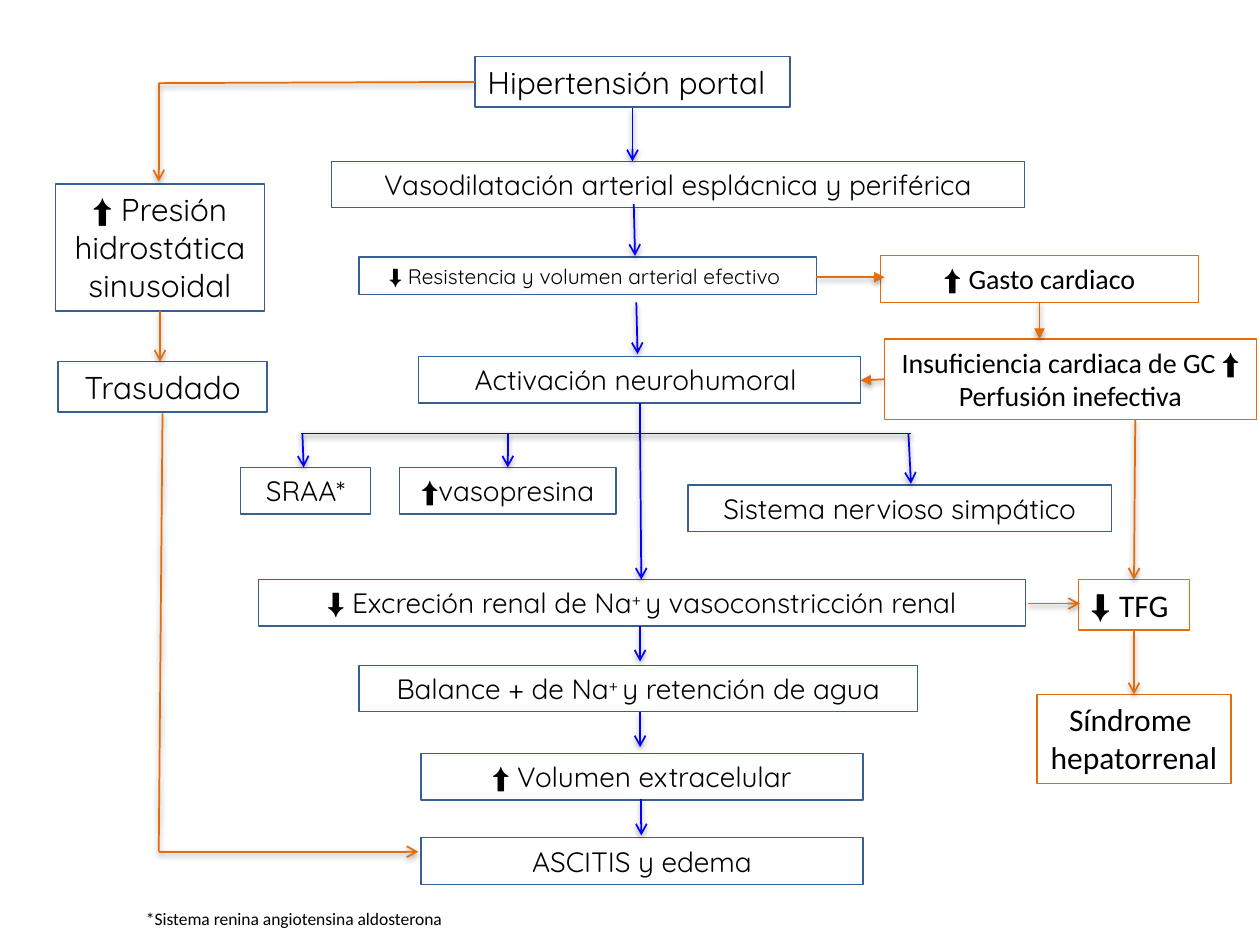
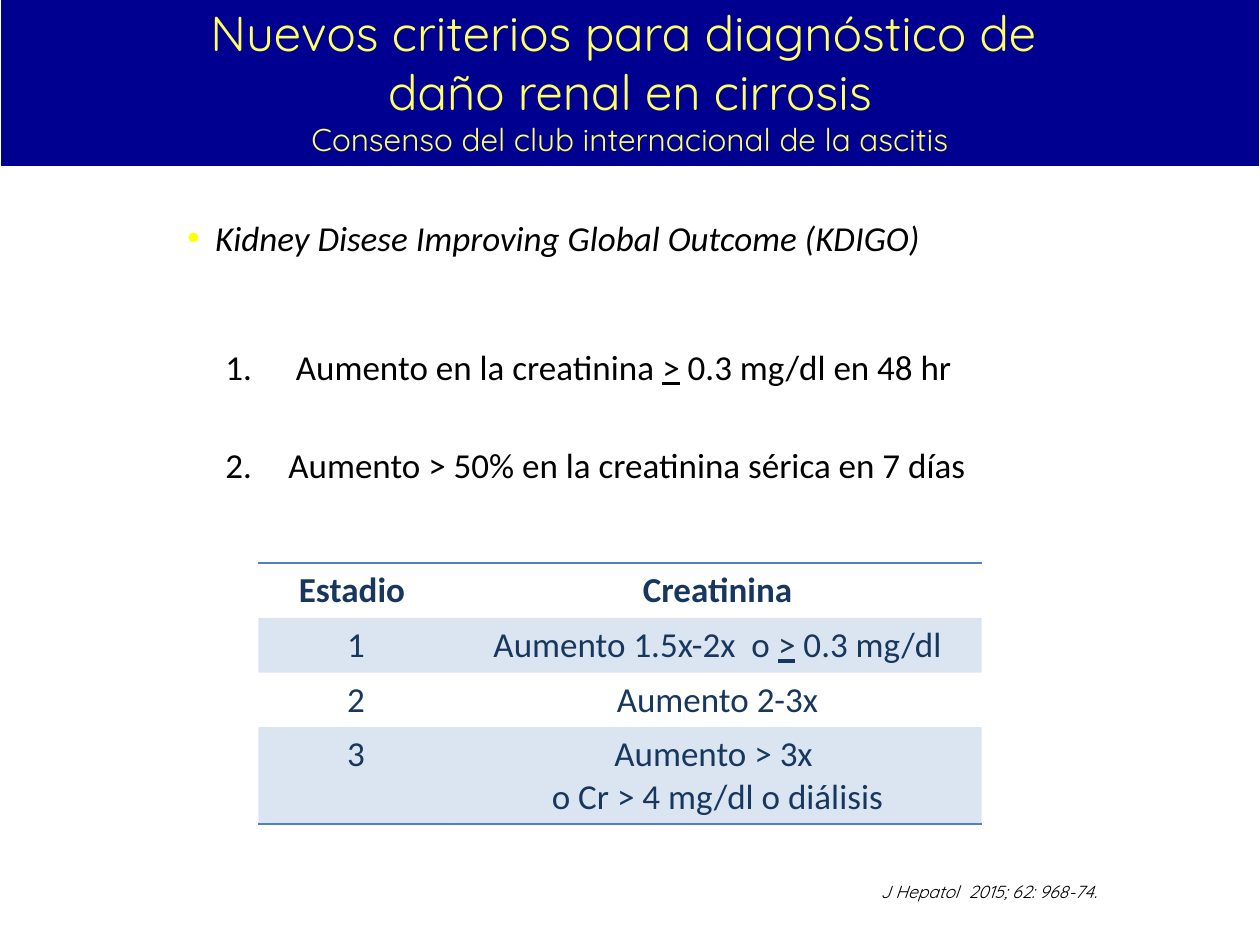
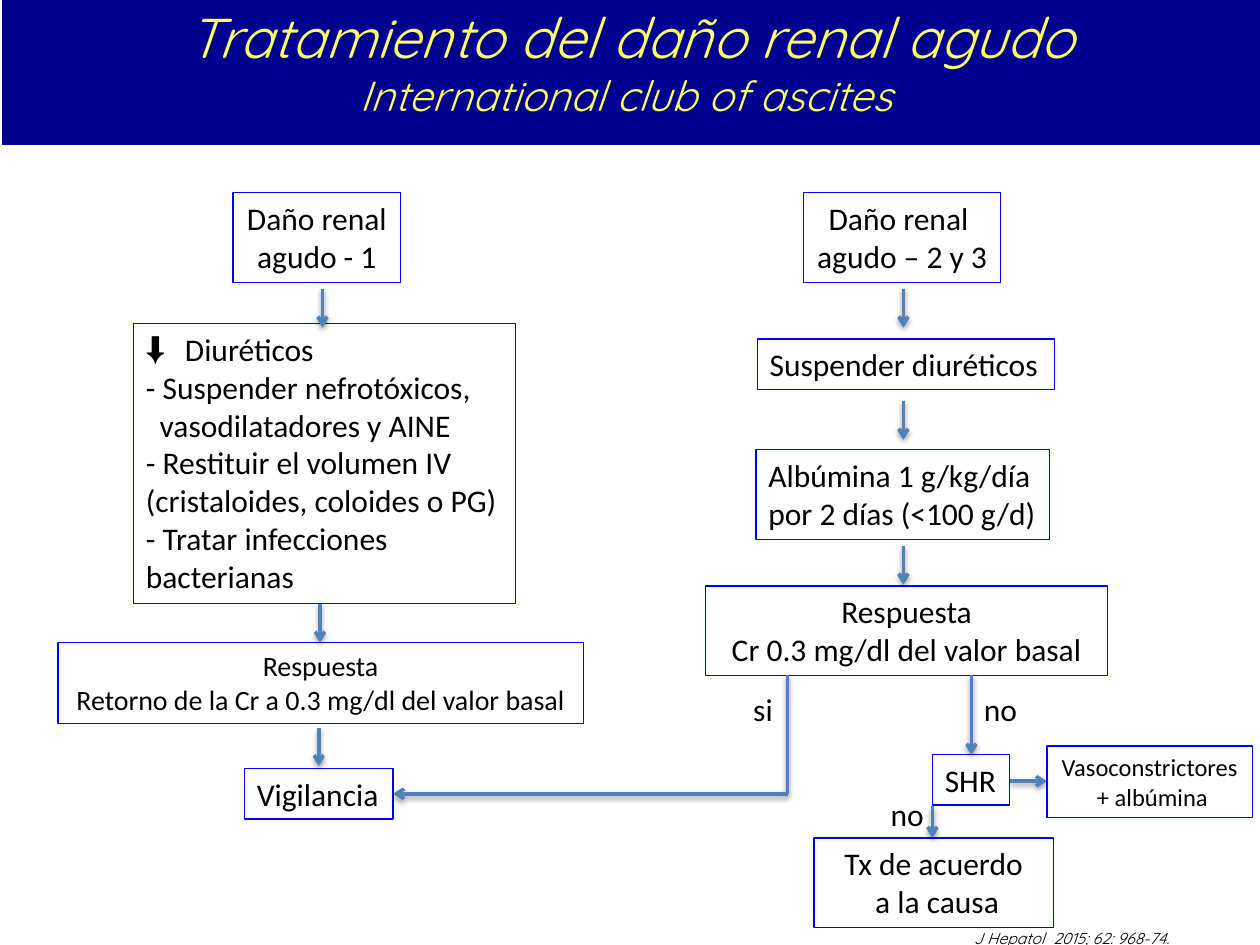
from dataclasses import dataclass
from lxml import etree
from pptx import Presentation, util as u
from pptx.dml.color import RGBColor
from pptx.enum import shapes, text
from pptx.oxml import ns


@dataclass(frozen=True)
class Theme:
    black: str = "000000"
    white: str = "FFFFFF"
    navy: str = "000090"
    pale: str = "FFFF66"
    yellow: str = "FFFF00"
    steel: str = "376092"
    blue: str = "0000FF"
    orange: str = "E46C0A"
    sky: str = "4F81BD"
    ink: str = "17375E"
    head: str = "Quicksand"
    body: str = "Calibri"
    sign: str = "Arial"
    huge: int = 32
    title: int = 28
    sub: int = 24
    large: int = 20
    base: int = 18
    mid: int = 16
    small: int = 14
    tiny: int = 12
    note: int = 10
    least: int = 9


T = Theme()
MID, LEFT = text.PP_ALIGN.CENTER, text.PP_ALIGN.LEFT
SIGN = {"name": T.sign}
UP, DOWN = ("⬆ ", SIGN), ("⬇ ", SIGN)
PLUS = ("+ ", {"base": 30000})
MIN = (">", {"underline": True})
CITE = "J Hepatol  2015; 62: 968-74."


def put(obj, **vals):
    for key, val in vals.items():
        setattr(obj, key, val)


def rgb(code):
    return RGBColor.from_string(code)


def node(top, tag, **vals):
    return etree.SubElement(top, ns.qn("a:" + tag), {k: str(v) for k, v in vals.items()})


class Deck:
    def __init__(self, theme):
        self.theme = theme
        self.prs = Presentation()
        put(self.prs, slide_width=u.Inches(10), slide_height=u.Inches(7.5))

    def new(self):
        self.slide = self.prs.slides.add_slide(self.prs.slide_layouts[6])

    def say(self, frame, paras, align=LEFT, color=None, **font):
        """Each paragraph is a string or a list of runs; a run may carry its own format."""
        for i, runs in enumerate(paras):
            par = frame.paragraphs[0] if i == 0 else frame.add_paragraph()
            par.alignment = align
            for item in [runs] if isinstance(runs, str) else runs:
                words, extra = (item, {}) if isinstance(item, str) else item
                look = {**font, **extra}
                base, size = look.pop("base", 0), look.pop("size")
                run = par.add_run()
                run.text = words
                put(run.font, size=u.Pt(size), **look)
                run.font.color.rgb = rgb(color or self.theme.black)
                if base:
                    run._r.get_or_add_rPr().set("baseline", str(base))

    def fit(self, shape, wrap):
        put(shape.text_frame, word_wrap=wrap, vertical_anchor=text.MSO_ANCHOR.TOP,
            auto_size=text.MSO_AUTO_SIZE.SHAPE_TO_FIT_TEXT)

    def box(self, at, paras, line, fill=None, wrap=True, **look):
        shape = self.slide.shapes.add_shape(
            shapes.MSO_SHAPE.RECTANGLE, *map(u.Inches, at))
        shape.shadow.inherit = False
        if fill:
            shape.fill.solid()
            shape.fill.fore_color.rgb = rgb(fill)
        else:
            shape.fill.background()
        shape.line.color.rgb = rgb(line)
        shape.line.width = u.Pt(0.75)
        self.fit(shape, wrap)
        self.say(shape.text_frame, paras, **look)
        return shape

    def label(self, at, paras, wrap=False, **look):
        shape = self.slide.shapes.add_textbox(*map(u.Inches, at))
        self.fit(shape, wrap)
        self.say(shape.text_frame, paras, **look)
        return shape

    def band(self, left, high, paras, **look):
        t = self.theme
        self.box((left, -0.03, 10, high), paras, t.white, fill=t.navy,
                 align=MID, color=t.pale, name=t.head, **look)

    def cite(self, at, size):
        self.label(at, [CITE], name=self.theme.head, size=size, italic=True)

    def list(self, par, left, hang=0, char=None, color=None):
        """Indent a paragraph; hang gives it a bullet, or a number without char."""
        props = par._p.get_or_add_pPr()
        props.set("marL", str(u.Inches(left)))
        props.set("indent", str(-u.Inches(hang)))
        if not hang:
            return
        if color:
            node(node(props, "buClr"), "srgbClr", val=color)
        if char:
            node(props, "buFont", typeface=self.theme.sign)
            node(props, "buChar", char=char)
        else:
            node(props, "buAutoNum", type="arabicPeriod")

    def route(self, *pts, color, width=1, tail="arrow"):
        """Join the points with lines; the tail sits on the last one."""
        for i, (start, end) in enumerate(zip(pts, pts[1:]), 2):
            wire = self.slide.shapes.add_connector(
                shapes.MSO_CONNECTOR.STRAIGHT, *map(u.Inches, start + end))
            wire.line.color.rgb = rgb(color)
            wire.line.width = u.Pt(width)
            if tail and i == len(pts):
                node(wire.line._get_or_add_ln(), "tailEnd", type=tail)
            glow = node(node(wire._element.spPr, "effectLst"), "outerShdw",
                        blurRad=40000, dist=20000, dir=5400000, rotWithShape=0)
            node(node(glow, "srgbClr", val=self.theme.black), "alpha", val=38000)

    def cell(self, cell, paras, edges, tint, **look):
        t = self.theme
        props = cell._tc.get_or_add_tcPr()
        for side in "LRTB":
            line = node(props, "ln" + side, w=u.Pt(1))
            if side in edges:
                node(node(line, "solidFill"), "srgbClr", val=t.sky)
            else:
                node(line, "noFill")
        if tint:
            cell.fill.solid()
            cell.fill.fore_color.rgb = rgb(t.sky)
            node(props[-1][0], "alpha", val=20000)
        else:
            cell.fill.background()
        self.say(cell.text_frame, paras, align=MID, color=t.ink,
                 name=t.body, size=t.large, **look)

    def table(self, at, cols, high, rows):
        size = (sum(cols), high * len(rows))
        grid = self.slide.shapes.add_table(
            len(rows), len(cols), *map(u.Inches, at + size)).table
        put(grid, first_row=False, horz_banding=False)
        for col, wide in zip(grid.columns, cols):
            col.width = u.Inches(wide)
        for r, row in enumerate(rows):
            edges = "TB" if r == 0 else "B" if r == len(rows) - 1 else ""
            for c, paras in enumerate(row):
                self.cell(grid.cell(r, c), paras, edges, r % 2 == 1, bold=r == 0)


def cause(deck):
    deck.new()
    main = dict(line=T.steel, name=T.head)
    # Main chain and mediators
    deck.box((3.77, 0.45, 2.5, 0.4), ["Hipertensión portal"], wrap=False, size=T.base, **main)
    deck.box((2.85, 2.04, 3.63, 0.3), [[DOWN, "Resistencia y volumen arterial efectivo "]],
             align=MID, size=T.tiny, **main)
    for left, top, wide, runs in (
        (2.63, 1.28, 5.5, "Vasodilatación arterial esplácnica y periférica"),
        (3.32, 2.83, 3.51, "Activación neurohumoral "),
        (1.91, 3.71, 1.03, "SRAA*"),
        (3.17, 3.71, 1.72, [("⬆", SIGN), "vasopresina"]),
        (5.46, 3.85, 3.36, "Sistema nervioso simpático"),
        (2.05, 4.6, 6.09, [DOWN, "Excreción renal de Na", PLUS, "y vasoconstricción renal"]),
        (2.85, 5.28, 4.43, ["Balance + de Na", PLUS, "y retención de agua"]),
        (3.34, 5.98, 3.51, [UP, "Volumen extracelular"]),
        (3.34, 6.65, 3.51, "ASCITIS y edema"),
    ):
        deck.box((left, top, wide, 0.37), [runs], align=MID, size=T.mid, **main)
    # Left branch
    for at, runs in (
        ((0.44, 1.46, 1.66, 1.01), [UP, "Presión hidrostática sinusoidal"]),
        ((0.46, 2.87, 1.66, 0.4), "Trasudado"),
    ):
        deck.box(at, [runs], align=MID, size=T.base, **main)
    # Right branch
    side = dict(line=T.orange, name=T.body)
    deck.box((6.99, 2.03, 2.52, 0.37), [[UP, "Gasto cardiaco"]], align=MID, size=T.mid, **side)
    deck.box((7.02, 2.69, 2.95, 0.64),
             [["Insuficiencia cardiaca de GC ", ("⬆", SIGN)], "Perfusión inefectiva"],
             align=MID, size=T.mid, **side)
    deck.box((8.56, 4.6, 0.88, 0.4), [[DOWN, "TFG"]], wrap=False, size=T.base, **side)
    deck.box((8.23, 5.51, 1.54, 0.71), ["Síndrome ", "hepatorrenal"],
             wrap=False, align=MID, size=T.base, **side)
    # Blue arrows
    for pts in (
        ((5.02, 0.86), (5.02, 1.28)),
        ((5.03, 1.62), (5.04, 2.03)),
        ((5.05, 2.4), (5.06, 2.81)),
        ((5.08, 3.2), (5.08, 3.45), (5.09, 4.6)),
        ((2.4, 3.44), (2.41, 3.71)),
        ((4.03, 3.44), (4.03, 3.71)),
        ((7.21, 3.44), (7.23, 3.84)),
        ((5.08, 4.97), (5.08, 5.25)),
        ((5.08, 5.65), (5.08, 5.93)),
        ((5.09, 6.34), (5.09, 6.63)),
    ):
        deck.route(*pts, color=T.blue)
    deck.route((2.39, 3.44), (7.23, 3.44), color=T.blue, tail=None)
    # Orange arrows
    for pts in (
        ((3.77, 0.65), (1.26, 0.66), (1.26, 1.44)),
        ((1.27, 2.47), (1.27, 2.87)),
        ((1.29, 3.28), (1.26, 6.76), (3.32, 6.76)),
        ((9.01, 3.33), (9, 4.6)),
        ((8.16, 4.79), (8.57, 4.79)),
        ((9, 5.01), (9, 5.51)),
    ):
        deck.route(*pts, color=T.orange)
    for pts in (
        ((6.48, 2.2), (7.02, 2.2)),
        ((8.25, 2.4), (8.25, 2.69)),
        ((7.02, 3.01), (6.83, 3.02)),
    ):
        deck.route(*pts, color=T.orange, tail="triangle")
    deck.label((1.06, 7.16, 2.59, 0.27), ["*Sistema renina angiotensina aldosterona"],
               name=T.body, size=T.note)


def stage(deck):
    deck.new()
    deck.band(0, 1.35, [
        "Nuevos criterios para diagnóstico de ",
        "daño renal en cirrosis",
        [("Consenso del club internacional de la ascitis", {"size": T.base})],
    ], size=T.title)
    # Criteria
    plain = dict(name=T.body, size=T.large)
    lead = deck.label((1.31, 1.67, 6.44, 0.44),
                      ["Kidney Disese Improving Global Outcome (KDIGO)"],
                      wrap=True, italic=True, **plain)
    deck.list(lead.text_frame.paragraphs[0], 0.3, 0.22, "•", T.yellow)
    rules = deck.label((1.69, 2.29, 8.22, 4.36), [
        ["Aumento en la creatinina ", MIN, " 0.3 mg/dl en 48 hr"],
        "Aumento > 50% en la creatinina sérica en 7 días",
    ], wrap=True, **plain)
    frame = rules.text_frame
    put(frame, margin_top=u.Inches(0.45), auto_size=text.MSO_AUTO_SIZE.NONE)
    for par, hang in zip(frame.paragraphs, (0.56, 0.5)):
        deck.list(par, hang, hang)
    frame.paragraphs[1].space_before = u.Pt(32)
    # Stages
    deck.table((2.05, 4.47), (1.55, 4.19), 0.41, [
        (["Estadio "], ["Creatinina"]),
        (["1"], [["Aumento 1.5x-2x  o ", MIN, " 0.3 mg/dl"]]),
        (["2"], ["Aumento 2-3x"]),
        (["3"], ["Aumento > 3x ", "o Cr > 4 mg/dl o diálisis"]),
    ])
    deck.cite((6.89, 6.94, 2.02, 0.27), T.note)


def care(deck):
    deck.new()
    deck.band(0.01, 1.19, [
        "Tratamiento del daño renal agudo",
        [("International club of ascites ", {"size": T.sub})],
    ], size=T.huge, italic=True)
    look = dict(line=T.blue, name=T.body)
    # Centred steps
    for at, paras, size, wrap in (
        ((1.85, 1.53, 1.33, 0.71), ["Daño renal ", "agudo - 1"], T.base, False),
        ((0.46, 5.1, 4.17, 0.64),
         ["Respuesta", "Retorno de la Cr a 0.3 mg/dl del valor basal"], T.mid, True),
        ((6.38, 1.53, 1.56, 0.71), ["Daño renal ", "agudo – 2 y 3"], T.base, False),
        ((5.6, 4.65, 3.19, 0.71),
         ["Respuesta", "Cr 0.3 mg/dl del valor basal"], T.base, True),
        ((6.46, 6.65, 1.9, 0.71), ["Tx de acuerdo", " a la causa"], T.base, True),
        ((8.31, 5.92, 1.63, 0.57), ["Vasoconstrictores", " + albúmina"], T.small, False),
    ):
        deck.box(at, paras, wrap=wrap, align=MID, size=size, **look)
    # Left-aligned steps
    for at, paras in (
        ((1.94, 6.1, 1.18, 0.4), ["Vigilancia"]),
        ((6.01, 2.69, 2.36, 0.4), ["Suspender diuréticos"]),
        ((6, 3.57, 2.33, 0.71), ["Albúmina 1 g/kg/día", "por 2 días (<100 g/d)"]),
        ((7.4, 5.99, 0.61, 0.4), ["SHR"]),
    ):
        deck.box(at, paras, wrap=False, size=T.base, **look)
    steps = deck.box((1.06, 2.57, 3.03, 2.22), [
        "Diuréticos",
        "- Suspender nefrotóxicos,",
        "vasodilatadores y AINE",
        "- Restituir el volumen IV",
        "(cristaloides, coloides o PG)",
        "- Tratar infecciones bacterianas",
    ], size=T.base, **look).text_frame.paragraphs
    deck.list(steps[0], 0.31, 0.31, "⬇")
    deck.list(steps[2], 0.11)
    # Answers
    for left, top, wide, word in (
        (5.88, 5.43, 0.36, "si"), (7.71, 5.43, 0.47, "no"), (6.97, 6.26, 0.47, "no"),
    ):
        deck.label((left, top, wide, 0.4), [word], name=T.body, size=T.base)
    # Arrows
    down = [(2.56, 2.29, 2.6), (2.54, 4.79, 5.1), (2.53, 5.78, 6.08),
            (7.17, 2.29, 2.6), (7.17, 3.18, 3.49), (7.17, 4.33, 4.64),
            (7.71, 5.36, 5.99), (7.4, 6.4, 6.65)]
    for pts in [((x, top), (x, end)) for x, top, end in down] + [
        ((6.25, 5.36), (6.25, 6.3), (3.12, 6.3)),
        ((8.02, 6.2), (8.31, 6.2)),
    ]:
        deck.route(*pts, color=T.sky, width=2)
    deck.cite((7.63, 7.32, 1.85, 0.25), T.least)


def main():
    deck = Deck(T)
    for build in (cause, stage, care):
        build(deck)
    deck.prs.save("out.pptx")


if __name__ == "__main__":
    main()
